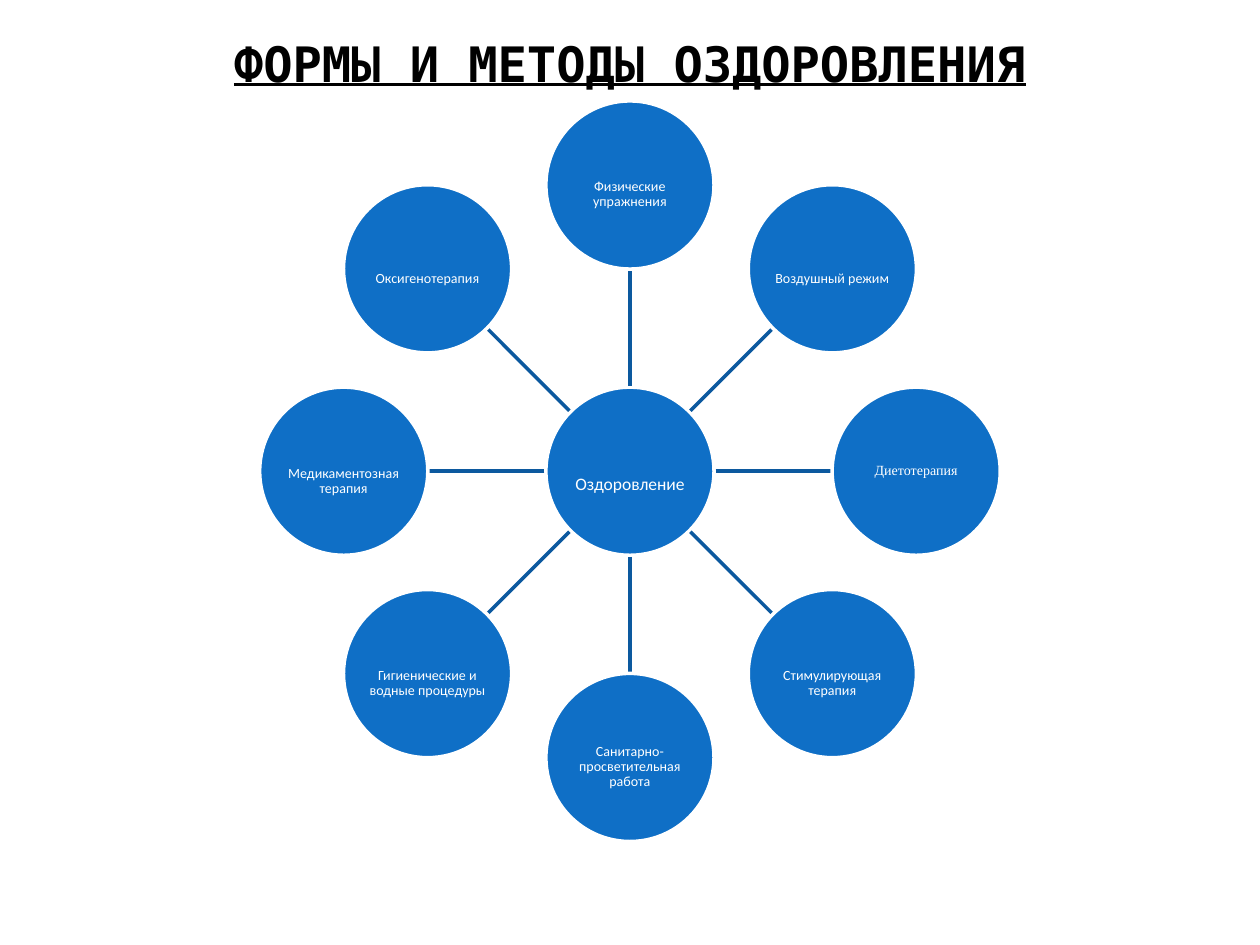
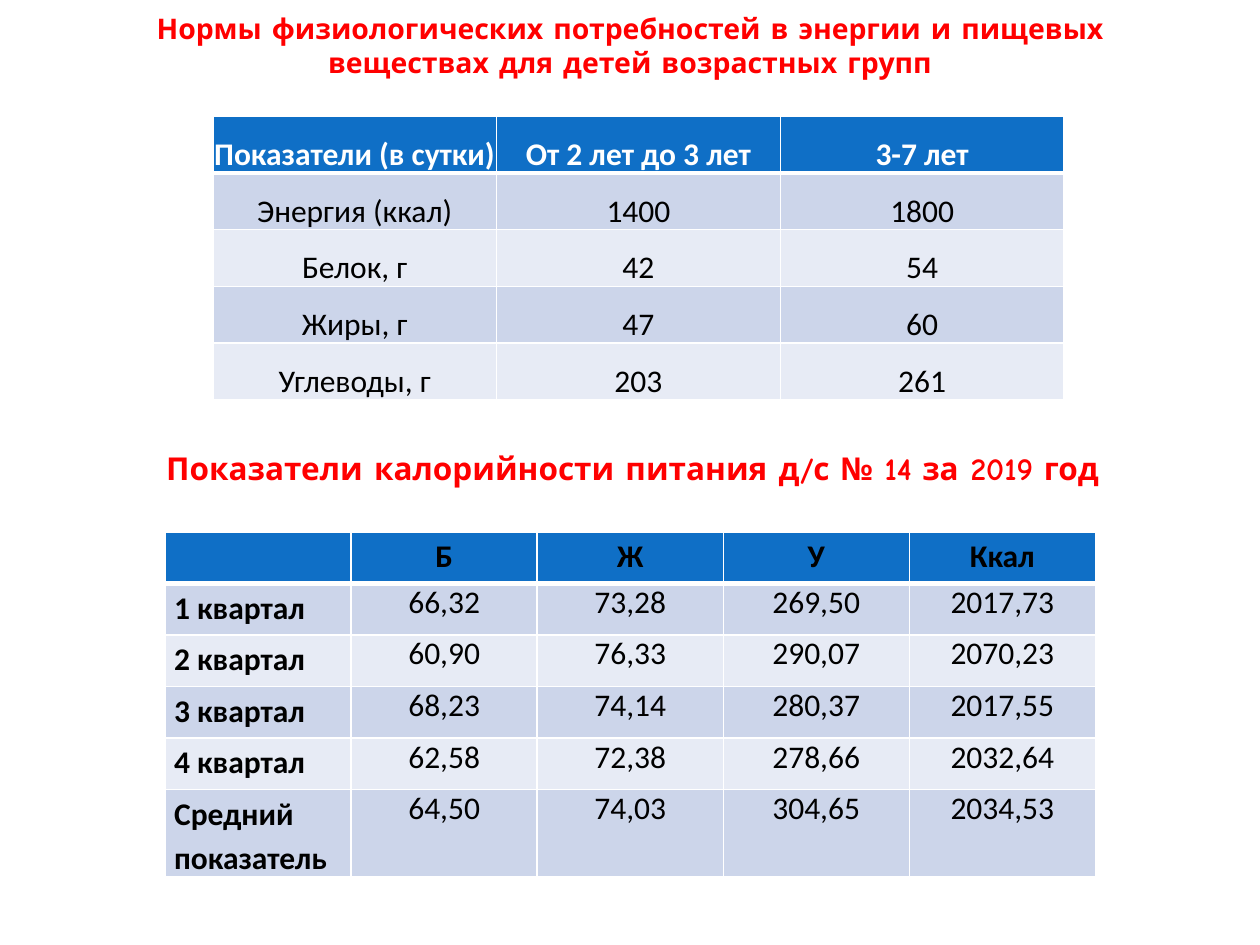
"""Build two slides on child health: a wheel of methods and two diet tables."""
from math import cos, pi, sin

from lxml.etree import SubElement
from pptx import Presentation
from pptx.dml.color import RGBColor
from pptx.enum.shapes import MSO_CONNECTOR, MSO_SHAPE
from pptx.enum.text import MSO_ANCHOR, PP_ALIGN
from pptx.oxml.ns import qn
from pptx.util import Cm, Pt

BLUE = RGBColor(0x0F, 0x6F, 0xC6)
NAVY = RGBColor(0x0C, 0x59, 0x9F)
DARK = RGBColor(0xCC, 0xD5, 0xEA)
PALE = RGBColor(0xE7, 0xEB, 0xF5)
RED = RGBColor(0xFF, 0, 0)
BLACK = RGBColor(0, 0, 0)
WHITE = RGBColor(0xFF, 0xFF, 0xFF)

BODY = "Calibri"
COMIC = "Comic Neue"
MONO = "DejaVu Sans Mono"
SERIF = "Times New Roman"

MID_X, MID_Y = 12.7, 9.5
ORBIT = 5.77
DISC = 3.39
GAP = 0.03

METHODS = [
    "Физические упражнения",
    "Воздушный режим",
    "Диетотерапия",
    "Стимулирующая терапия",
    "Санитарно-просветительная работа",
    "Гигиенические и водные процедуры",
    "Медикаментозная терапия",
    "Оксигенотерапия",
]

NORMS = [
    ["Показатели (в сутки)", "От 2 лет до 3 лет", "3-7 лет"],
    ["Энергия (ккал)", "1400", "1800"],
    ["Белок, г", "42", "54"],
    ["Жиры, г", "47", "60"],
    ["Углеводы, г", "203", "261"],
]

MEALS = [
    ["", "Б", "Ж", "У", "Ккал"],
    ["1 квартал", "66,32", "73,28", "269,50", "2017,73"],
    ["2 квартал", "60,90", "76,33", "290,07", "2070,23"],
    ["3 квартал", "68,23", "74,14", "280,37", "2017,55"],
    ["4 квартал", "62,58", "72,38", "278,66", "2032,64"],
    ["Средний показатель", "64,50", "74,03", "304,65", "2034,53"],
]


def write(frame, text, size, color, face=BODY, bold=False, line=False,
          align=PP_ALIGN.CENTER, space=1.0):
    """Put one styled run in the first paragraph of a text frame."""
    para = frame.paragraphs[0]
    para.alignment = align
    para.line_spacing = space
    run = para.add_run()
    run.text = text
    font = run.font
    font.name, font.size, font.bold = face, Pt(size), bold
    font.underline = line
    font.color.rgb = color


def add_head(slide, box, text, size, color, face, line=False,
             align=PP_ALIGN.CENTER):
    """Add a bold heading in a box given in centimetres."""
    frame = slide.shapes.add_textbox(*map(Cm, box)).text_frame
    frame.word_wrap = True
    frame.vertical_anchor = MSO_ANCHOR.MIDDLE
    write(frame, text, size, color, face, True, line, align)


def add_disc(slide, x, y, text, size, drop, face=BODY):
    """Add a round label centred on x, y with its text set lower by drop."""
    half = DISC / 2
    disc = slide.shapes.add_shape(MSO_SHAPE.OVAL, Cm(x - half), Cm(y - half),
                                  Cm(DISC), Cm(DISC))
    disc.shadow.inherit = False
    disc.fill.solid()
    disc.fill.fore_color.rgb = BLUE
    disc.line.color.rgb = WHITE
    disc.line.width = Pt(2)
    frame = disc.text_frame
    frame.word_wrap = True
    frame.vertical_anchor = MSO_ANCHOR.MIDDLE
    frame.margin_left = frame.margin_right = frame.margin_bottom = Cm(0.02)
    frame.margin_top = Cm(0.02 + 2 * drop)
    write(frame, text, size, WHITE, face, space=0.9)


def add_spoke(slide, dx, dy):
    """Add a line from the hub to a disc in the direction dx, dy."""
    near, far = DISC / 2 + GAP, ORBIT - DISC / 2
    ends = [Cm(mid + step * reach) for reach in (near, far)
            for mid, step in ((MID_X, dx), (MID_Y, dy))]
    spoke = slide.shapes.add_connector(MSO_CONNECTOR.STRAIGHT, *ends)
    spoke.line.color.rgb = NAVY
    spoke.line.width = Pt(2)
    SubElement(spoke._element.spPr, qn("a:effectLst"))


def add_wheel(slide):
    """Add the hub and the ring of methods, clockwise from the top."""
    add_disc(slide, MID_X, MID_Y, "Оздоровление", 10, 0.27)
    for index, text in enumerate(METHODS):
        turn = 2 * pi * index / len(METHODS)
        dx, dy = sin(turn), -cos(turn)
        add_spoke(slide, dx, dy)
        plain = text == "Диетотерапия"
        add_disc(slide, MID_X + ORBIT * dx, MID_Y + ORBIT * dy, text, 8,
                 0 if plain else 0.2, SERIF if plain else BODY)


def edge(cell, row):
    """Draw white cell borders, thick under the header row."""
    widths = {"L": 1, "R": 1, "T": 3 if row == 1 else 1,
              "B": 3 if row == 0 else 1}
    props = cell._tc.get_or_add_tcPr()
    for side, width in widths.items():
        line = SubElement(props, qn(f"a:ln{side}"), w=str(Pt(width)))
        fill = SubElement(line, qn("a:solidFill"))
        SubElement(fill, qn("a:srgbClr"), val=str(WHITE))


def add_grid(slide, left, top, wide, high, rows, pad, style):
    """Add a banded table; style gives colour, weight, align and spacing."""
    count = len(rows[0])
    table = slide.shapes.add_table(len(rows), count, Cm(left), Cm(top),
                                   Cm(wide * count),
                                   Cm(high * len(rows))).table
    for r, row in enumerate(rows):
        for c, text in enumerate(row):
            cell = table.cell(r, c)
            edge(cell, r)
            cell.fill.solid()
            cell.fill.fore_color.rgb = (
                BLUE if r == 0 else DARK if r % 2 else PALE)
            cell.margin_left = cell.margin_right = Cm(pad)
            cell.margin_top = cell.margin_bottom = 0
            if text:
                write(cell.text_frame, text, 18, **style(r, c))


def norm_style(r, c):
    """Style a cell of the norms table."""
    return {"color": BLACK if r else WHITE, "bold": r == 0, "space": 1.5}


def meal_style(r, c):
    """Style a cell of the meals table."""
    label = r == 0 or c == 0
    return {"color": BLACK, "bold": label, "space": 1.15 if label else 1.0,
            "align": PP_ALIGN.CENTER if c else PP_ALIGN.LEFT}


def main():
    """Build both slides and save the deck."""
    deck = Presentation()
    deck.slide_width, deck.slide_height = Cm(25.4), Cm(19.05)
    blank = deck.slide_layouts[6]

    slide = deck.slides.add_slide(blank)
    add_head(slide, (1.27, 0.76, 22.86, 1.02), "ФОРМЫ И МЕТОДЫ ОЗДОРОВЛЕНИЯ",
             27.9, BLACK, MONO, line=True)
    add_wheel(slide)

    slide = deck.slides.add_slide(blank)
    add_head(slide, (1.27, 0, 22.86, 1.83),
             "Нормы физиологических потребностей в энергии и пищевых "
             "веществах для детей возрастных групп", 16.2, RED, COMIC)
    add_grid(slide, 4.29, 2.34, 5.72, 1.04, NORMS, 0.02, norm_style)
    add_head(slide, (3.1, 8.92, 22.3, 1.04),
             "Показатели калорийности питания д/с № 14 за 2019 год",
             18, RED, COMIC, align=PP_ALIGN.LEFT)
    add_grid(slide, 3.33, 10.72, 3.75, 1.04, MEALS, 0.18, meal_style)

    deck.save("out.pptx")


if __name__ == "__main__":
    main()
